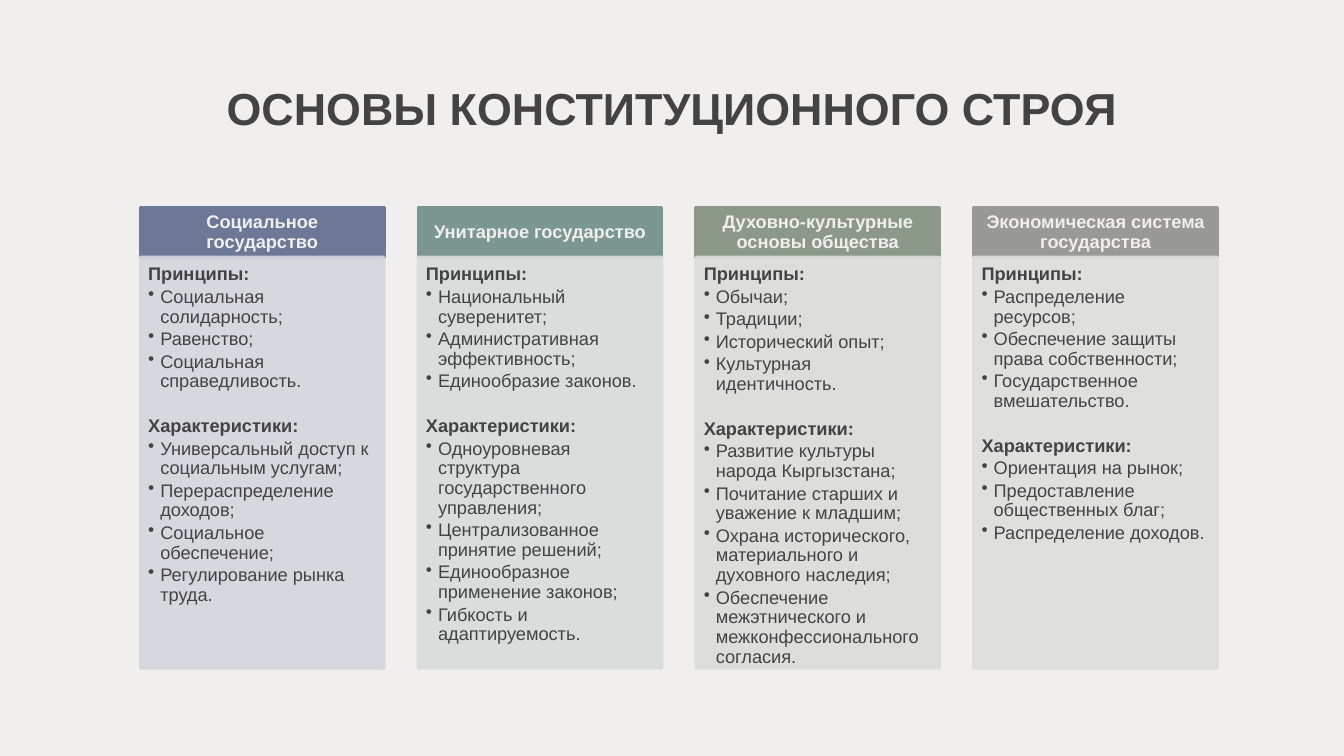
import pptx
import pptx.util
import pptx.dml.color
import pptx.enum.shapes
import pptx.enum.text
import pptx.oxml.ns
import lxml.etree

Inches, Pt = pptx.util.Inches, pptx.util.Pt
Color = pptx.dml.color.RGBColor.from_string
Anchor, Align = pptx.enum.text.MSO_ANCHOR, pptx.enum.text.PP_ALIGN
qn = pptx.oxml.ns.qn

THEME = {
    "font": "Arial", "page": "F1EFEE", "ink": "434343", "light": "F1EFEE",
    "title_size": 32, "text_size": 13, "outline": 2, "body_opacity": 90,
}

# Columns: heading, heading colour, body colour, principles, characteristics
COLUMNS = [
    ("Социальное государство", "6D7897", "D4D6DD",
     ["Социальная солидарность;", "Равенство;", "Социальная справедливость."],
     ["Универсальный доступ к социальным услугам;", "Перераспределение доходов;",
      "Социальное обеспечение;", "Регулирование рынка труда."]),
    ("Унитарное государство", "7C9792", "D7DDDC",
     ["Национальный суверенитет;", "Административная эффективность;",
      "Единообразие законов."],
     ["Одноуровневая структура государственного управления;",
      "Централизованное принятие решений;", "Единообразное применение законов;",
      "Гибкость и адаптируемость."]),
    ("Духовно-культурные основы общества", "8C988A", "DBDDDA",
     ["Обычаи;", "Традиции;", "Исторический опыт;", "Культурная идентичность."],
     ["Развитие культуры народа Кыргызстана;",
      "Почитание старших и уважение к младшим;",
      "Охрана исторического, материального и духовного наследия;",
      "Обеспечение межэтнического и межконфессионального согласия."]),
    ("Экономическая система государства", "999998", "DEDEDD",
     ["Распределение ресурсов;", "Обеспечение защиты права собственности;",
      "Государственное вмешательство."],
     ["Ориентация на рынок;", "Предоставление общественных благ;",
      "Распределение доходов."]),
]

# Grid in inches
LEFT, PITCH, WIDTH = 1.39, 2.755, 2.42
HEAD_TOP, HEAD_HEIGHT, BODY_TOP, BODY_HEIGHT = 2.06, 0.5, 2.55, 4.08
INDENT = 0.12


def add_panel(page, place, color, insets, anchor, opacity=100):
    """Add a rectangle, or a plain text box when color is None."""
    place = [Inches(length) for length in place]
    if color is None:
        box = page.shapes.add_textbox(*place)
    else:
        box = page.shapes.add_shape(pptx.enum.shapes.MSO_SHAPE.RECTANGLE, *place)
        box.shadow.inherit = False
        box.line.width = Pt(THEME["outline"])
        for paint in (box.fill, box.line.fill):
            paint.solid()
            paint.fore_color.rgb = Color(color)
        if opacity < 100:
            for tint in box._element.spPr.iter(qn("a:srgbClr")):
                lxml.etree.SubElement(tint, qn("a:alpha"), val=str(opacity * 1000))
    sides = ("margin_left", "margin_top", "margin_right", "margin_bottom")
    settings = dict(zip(sides, map(Inches, insets)),
                    word_wrap=True, vertical_anchor=anchor)
    for name, value in settings.items():
        setattr(box.text_frame, name, value)
    return box.text_frame


def add_line(frame, text, size, color, bold, bullet=False, **layout):
    """Write one paragraph, using the empty first one when it is free."""
    para = frame.paragraphs[0]
    if para.runs:
        para = frame.add_paragraph()
    for name, value in layout.items():
        setattr(para, name, value)
    if bullet:
        properties = para._p.get_or_add_pPr()
        properties.set("marL", str(Inches(INDENT)))
        properties.set("indent", str(-Inches(INDENT)))
        lxml.etree.SubElement(properties, qn("a:buChar"), char="•")
    span = para.add_run()
    span.text = text
    for name, value in {"name": THEME["font"], "size": Pt(size), "bold": bold}.items():
        setattr(span.font, name, value)
    span.font.color.rgb = Color(color)


deck = pptx.Presentation()
deck.slide_width, deck.slide_height = Inches(13.33), Inches(7.5)
page = deck.slides.add_slide(deck.slide_layouts[6])
page.background.fill.solid()
page.background.fill.fore_color.rgb = Color(THEME["page"])

# Title
title = add_panel(page, (1.05, 0.65, 11.23, 0.84), None, [0.13] * 4, Anchor.MIDDLE)
add_line(title, "ОСНОВЫ КОНСТИТУЦИОННОГО СТРОЯ", THEME["title_size"], THEME["ink"],
         True, alignment=Align.CENTER)

for index, (heading, dark, pale, principles, traits) in enumerate(COLUMNS):
    left = LEFT + index * PITCH

    # Column heading
    head = add_panel(page, (left, HEAD_TOP, WIDTH, HEAD_HEIGHT), dark,
                     (0.1, 0.06, 0.1, 0.06), Anchor.MIDDLE)
    add_line(head, heading, THEME["text_size"], THEME["light"], True,
             alignment=Align.CENTER, line_spacing=0.9)

    # Column body: two labelled lists
    body = add_panel(page, (left, BODY_TOP, WIDTH, BODY_HEIGHT), pale,
                     (0.08, 0.08, 0.1, 0.11), Anchor.TOP, THEME["body_opacity"])
    for label, items, gap in (("Принципы:", principles, 0),
                              ("Характеристики:", traits, 16)):
        layout = {"alignment": Align.LEFT, "line_spacing": 0.9, "space_after": Pt(2)}
        add_line(body, label, THEME["text_size"], THEME["ink"], True,
                 space_before=Pt(gap), **layout)
        for item in items:
            add_line(body, item, THEME["text_size"], THEME["ink"], False,
                     bullet=True, **layout)

deck.save("out.pptx")
